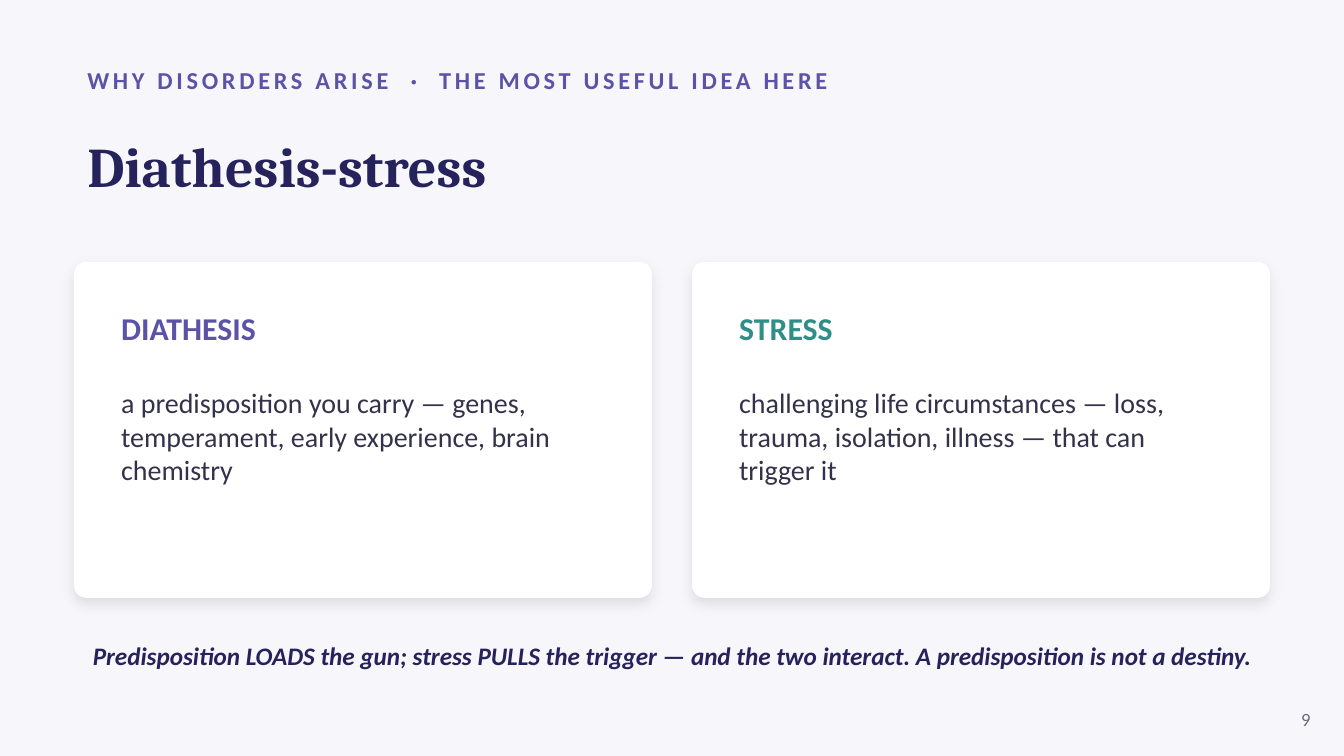
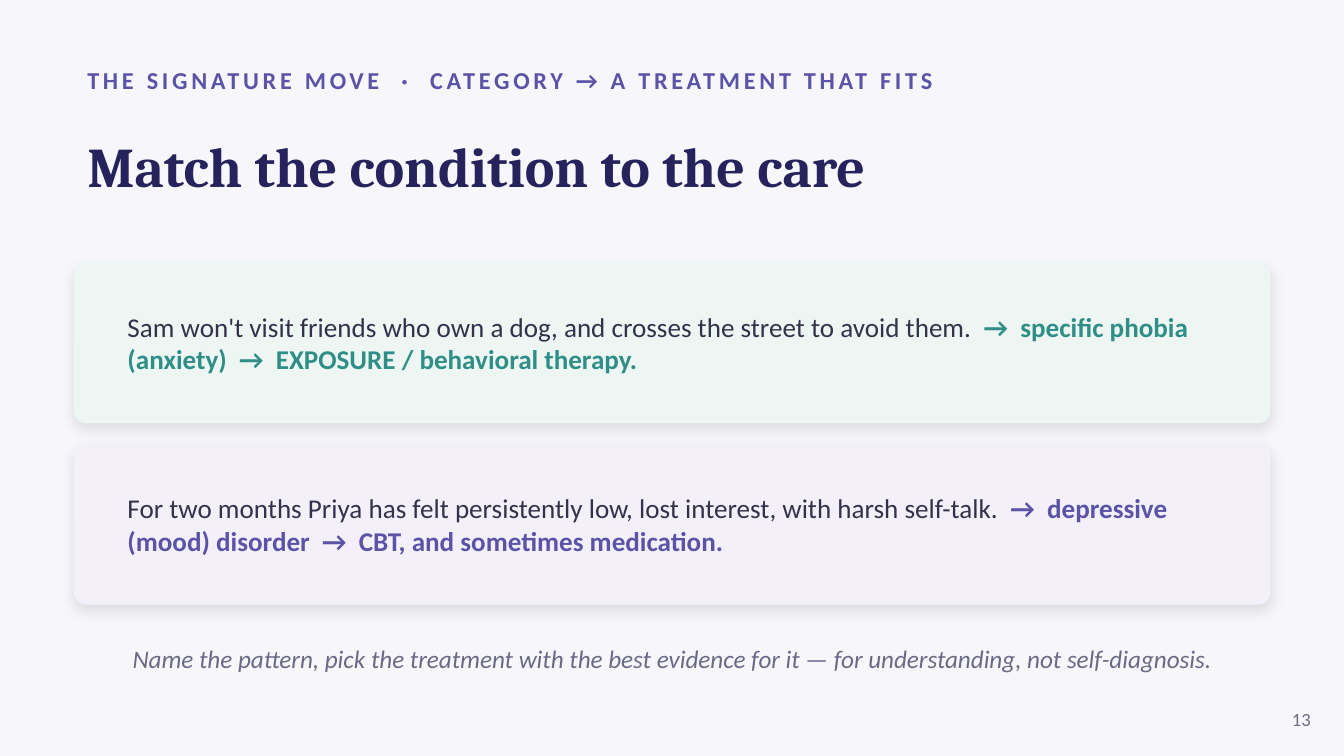
import pptx
import pptx.util
import pptx.dml.color
import pptx.enum.shapes
import pptx.enum.text
import lxml.etree
from pptx.oxml.ns import qn

Cm = pptx.util.Cm
Pt = pptx.util.Pt
RGBColor = pptx.dml.color.RGBColor
ALIGN = pptx.enum.text.PP_ALIGN
ANCHOR = pptx.enum.text.MSO_ANCHOR

PAPER = RGBColor(0xF7, 0xF7, 0xFB)
WHITE = RGBColor(0xFF, 0xFF, 0xFF)
MINT = RGBColor(0xEE, 0xF6, 0xF4)
LILAC = RGBColor(0xF3, 0xF0, 0xFA)
NAVY = RGBColor(0x26, 0x23, 0x5C)
VIOLET = RGBColor(0x5B, 0x53, 0xA6)
TEAL = RGBColor(0x2F, 0x8F, 0x86)
INK = RGBColor(0x33, 0x32, 0x4A)
GREY = RGBColor(0x6B, 0x6A, 0x86)

BODY, SERIF = "Calibri", "Cambria"
LEFT, WIDTH, TOP = 1.4, 22.61, 4.95
RADIUS = 0.23


class Deck:
    def __init__(self):
        self.prs = pptx.Presentation()
        self.prs.slide_width, self.prs.slide_height = Cm(25.4), Cm(14.29)
        self.s = None

    def slide(self, kicker, title, number):
        self.s = self.prs.slides.add_slide(self.prs.slide_layouts[6])
        self.s.background.fill.solid()
        self.s.background.fill.fore_color.rgb = PAPER
        tf = self.frame(LEFT, 1.07, 22.86, 0.89)
        p = self.para(tf, kicker, 13, VIOLET, bold=True)
        p.runs[0]._r.get_or_add_rPr().set("spc", "200")
        tf = self.frame(LEFT, 1.98, WIDTH, 2.29)
        self.para(tf, title, 30, NAVY, bold=True, name=SERIF)
        tf = self.frame(23.75, 13.21, 1.27, 0.76)
        self.para(tf, str(number), 10, GREY, align=ALIGN.RIGHT)

    def frame(self, x, y, w, h, anchor=ANCHOR.MIDDLE):
        tf = self.s.shapes.add_textbox(Cm(x), Cm(y), Cm(w), Cm(h)).text_frame
        tf.word_wrap = True
        tf.vertical_anchor = anchor
        return tf

    def para(self, tf, text, size, color, bold=None, italic=None, name=BODY, align=None):
        p = tf.paragraphs[0]
        if p.runs:
            p = tf.add_paragraph()
        p.add_run().text = text
        p.alignment = align
        p.font.name, p.font.size = name, Pt(size)
        p.font.bold, p.font.italic = bold, italic
        p.font.color.rgb = color
        return p

    def card(self, x, y, w, h, fill):
        sp = self.s.shapes.add_shape(
            pptx.enum.shapes.MSO_SHAPE.ROUNDED_RECTANGLE, Cm(x), Cm(y), Cm(w), Cm(h))
        sp.adjustments[0] = RADIUS / min(w, h)
        sp.fill.solid()
        sp.fill.fore_color.rgb = fill
        sp.line.fill.background()
        sp.shadow.inherit = False
        effects = sp._element.spPr.find(qn("a:effectLst"))
        shadow = lxml.etree.SubElement(
            effects, qn("a:outerShdw"), blurRad=str(Pt(7)), dist=str(Pt(3)),
            dir="5400000", algn="bl", rotWithShape="0")
        color = lxml.etree.SubElement(shadow, qn("a:srgbClr"), val="000000")
        lxml.etree.SubElement(color, qn("a:alpha"), val="10000")

    def term(self, x, heading, text, accent):
        w, h = 10.92, 6.35
        self.card(x, TOP, w, h, WHITE)
        tf = self.frame(x + 0.64, TOP + 0.76, w - 1.27, 5.08, ANCHOR.TOP)
        p = self.para(tf, heading, 17, accent, bold=True)
        p.space_after = Pt(20.75)
        self.para(tf, text, 15, INK)

    def case(self, y, story, answer, accent, fill):
        h = 3.05
        self.card(LEFT, y, WIDTH, h, fill)
        tf = self.frame(LEFT + 0.76, y + 0.51, WIDTH - 1.52, h - 1.02)
        p = self.para(tf, story, 14.5, INK)
        r = p.add_run()
        r.text = answer
        r.font.bold = True
        r.font.color.rgb = accent

    def takeaway(self, y, h, text, color, bold=None):
        tf = self.frame(LEFT, y, WIDTH, h)
        self.para(tf, text, 13.5, color, bold=bold, italic=True, align=ALIGN.CENTER)


def main():
    deck = Deck()

    deck.slide("WHY DISORDERS ARISE  ·  THE MOST USEFUL IDEA HERE", "Diathesis-stress", 9)
    terms = [
        ("DIATHESIS", "a predisposition you carry — genes, temperament, "
         "early experience, brain chemistry", VIOLET),
        ("STRESS", "challenging life circumstances — loss, trauma, isolation, "
         "illness — that can trigger it", TEAL),
    ]
    for i, term in enumerate(terms):
        deck.term(LEFT + i * 11.68, *term)
    deck.takeaway(11.81, 1.14, "Predisposition LOADS the gun; stress PULLS the trigger — and "
                  "the two interact. A predisposition is not a destiny.", NAVY, bold=True)

    deck.slide("THE SIGNATURE MOVE  ·  CATEGORY → A TREATMENT THAT FITS",
               "Match the condition to the care", 13)
    cases = [
        ("Sam won't visit friends who own a dog, and crosses the street to avoid them.  ",
         "→  specific phobia (anxiety)  →  EXPOSURE / behavioral therapy.", TEAL, MINT),
        ("For two months Priya has felt persistently low, lost interest, with harsh self-talk.  ",
         "→  depressive (mood) disorder  →  CBT, and sometimes medication.", VIOLET, LILAC),
    ]
    for i, case in enumerate(cases):
        deck.case(TOP + i * 3.43, *case)
    deck.takeaway(11.94, 1.02, "Name the pattern, pick the treatment with the best evidence "
                  "for it — for understanding, not self-diagnosis.", GREY)

    deck.prs.save("out.pptx")


if __name__ == "__main__":
    main()
